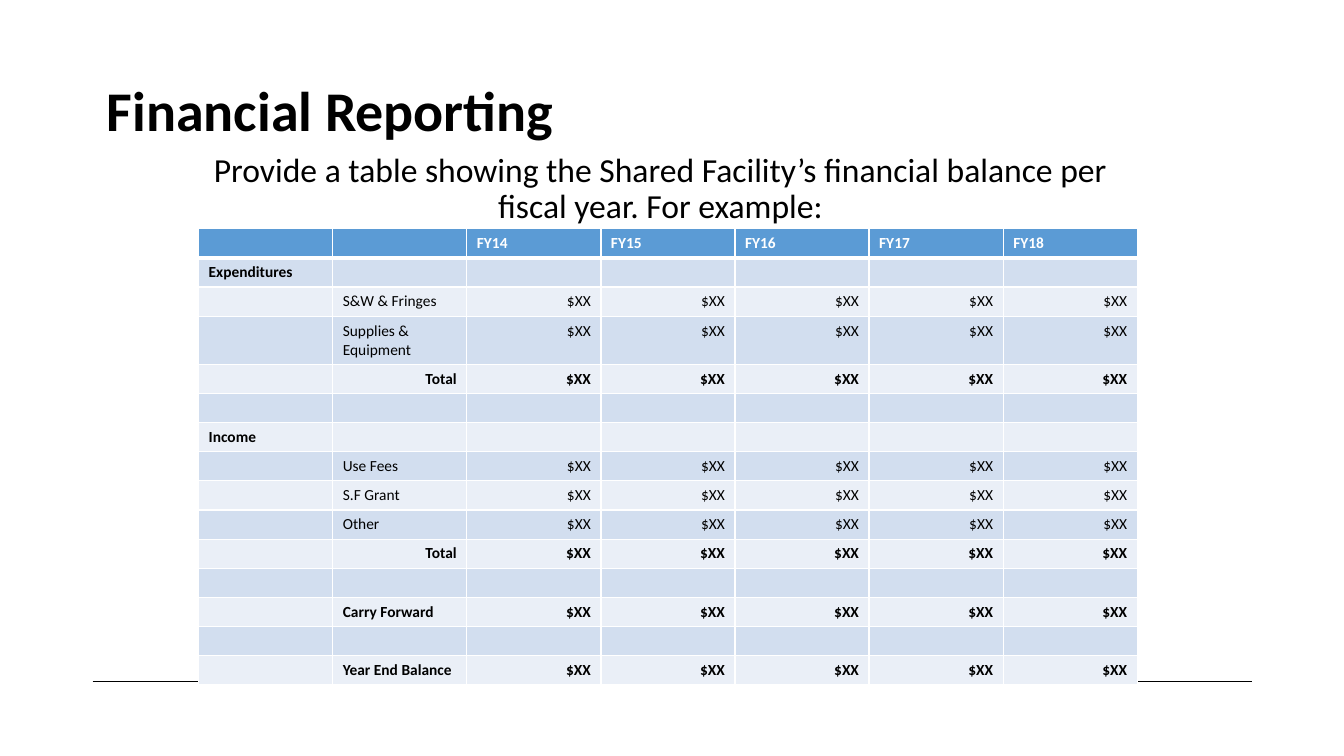
from lxml.etree import SubElement
from pptx import Presentation
from pptx.dml.color import RGBColor
from pptx.enum.text import MSO_ANCHOR as Anchor, MSO_AUTO_SIZE as AutoSize, PP_ALIGN as Align
from pptx.oxml import parse_xml
from pptx.oxml.ns import nsdecls, qn
from pptx.util import Inches, Pt

COLORS = {"text": "000000", "white": "FFFFFF", "header": "5B9BD5",
          "band_dark": "D2DEEF", "band_light": "EAEFF7"}
FONT = "Calibri"
YEARS = ["FY14", "FY15", "FY16", "FY17", "FY18"]
AMOUNTS = ["$XX"] * len(YEARS)
BLANKS = [""] * len(YEARS)
ROWS = [
    ["", "", *YEARS],
    ["Expenditures", "", *BLANKS],
    ["", "S&W & Fringes", *AMOUNTS],
    ["", "Supplies & Equipment", *AMOUNTS],
    ["", "Total", *AMOUNTS],
    ["", "", *BLANKS],
    ["Income", "", *BLANKS],
    ["", "Use Fees", *AMOUNTS],
    ["", "S.F Grant", *AMOUNTS],
    ["", "Other", *AMOUNTS],
    ["", "Total", *AMOUNTS],
    ["", "", *BLANKS],
    ["", "Carry Forward", *AMOUNTS],
    ["", "", *BLANKS],
    ["", "Year End Balance", *AMOUNTS],
]
BOLD_LABELS = {"Total", "Carry Forward", "Year End Balance"}


def rgb(name):
    """Return the named palette colour."""
    return RGBColor.from_string(COLORS[name])


def write(tf, text, size, color="text", bold=False, align=Align.LEFT, spacing=None):
    """Write one formatted paragraph into a text frame."""
    p = tf.paragraphs[0]
    p.alignment = align
    p.line_spacing = spacing
    if not text:
        p._p.get_or_add_endParaRPr().set("sz", str(size * 100))
        return
    r = p.add_run()
    r.text = text
    r.font.name, r.font.size, r.font.bold = FONT, Pt(size), bold
    r.font.color.rgb = rgb(color)


def fill_placeholder(sp, box, text, size, anchor, **fmt):
    """Move a placeholder to its box and write its text."""
    sp.left, sp.top, sp.width, sp.height = [Inches(v) for v in box]
    tf = sp.text_frame
    tf.word_wrap = True
    tf.auto_size = AutoSize.NONE
    tf.vertical_anchor = anchor
    write(tf, text, size, spacing=0.9, **fmt)


def add_rule(s, x, y, width):
    """Draw the thin horizontal footer rule."""
    rule = s.shapes.add_connector(1, Inches(x), Inches(y), Inches(x + width), Inches(y))
    rule.line.color.rgb = rgb("text")
    rule.line.width = Pt(0.25)
    rule._element.spPr.append(parse_xml(f"<a:effectLst {nsdecls('a')}/>"))


def set_borders(cell, top=1, bottom=1):
    """Give a cell white borders with the given widths in points."""
    tcPr = cell._tc.get_or_add_tcPr()
    for side, width in {"L": 1, "R": 1, "T": top, "B": bottom}.items():
        ln = SubElement(tcPr, qn(f"a:ln{side}"), w=str(Pt(width)))
        SubElement(SubElement(ln, qn("a:solidFill")), qn("a:srgbClr"), val=COLORS["white"])


def add_balance_table(s, x, y, width):
    """Build the balance table by fiscal year."""
    n_cols = len(ROWS[0])
    row_h, tall_h = 0.26, 0.44
    height = row_h * (len(ROWS) - 1) + tall_h
    table = s.shapes.add_table(len(ROWS), n_cols, Inches(x), Inches(y),
                               Inches(width), Inches(height)).table
    for i, values in enumerate(ROWS):
        label = values[1]
        table.rows[i].height = Inches(tall_h if label == "Supplies & Equipment" else row_h)
        fill = "header" if i == 0 else "band_dark" if i % 2 else "band_light"
        for j, text in enumerate(values):
            cell = table.cell(i, j)
            set_borders(cell, top=3 if i == 1 else 1, bottom=3 if i == 0 else 1)
            cell.fill.solid()
            cell.fill.fore_color.rgb = rgb(fill)
            right = text in ("$XX", "Total")
            write(cell.text_frame, text, 11,
                  color="white" if i == 0 else "text",
                  bold=i == 0 or j == 0 or label in BOLD_LABELS,
                  align=Align.RIGHT if right else Align.LEFT)


def add_financial_slide(prs):
    """Add the financial reporting slide."""
    s = prs.slides.add_slide(prs.slide_layouts[0])
    add_rule(s, 0.92, 6.76, 11.5)
    fill_placeholder(s.shapes.title, (0.96, 0.67, 11.18, 0.8),
                     "Financial Reporting", 40, Anchor.BOTTOM, bold=True)
    fill_placeholder(s.placeholders[1], (1.82, 1.47, 9.46, 3.83),
                     "Provide a table showing the Shared Facility’s financial balance "
                     "per fiscal year. For example:", 24, Anchor.TOP, align=Align.CENTER)
    add_balance_table(s, 1.97, 2.27, 9.31)


def main():
    """Build and save the presentation."""
    prs = Presentation()
    prs.slide_width, prs.slide_height = Inches(13.33), Inches(7.5)
    add_financial_slide(prs)
    prs.save("out.pptx")


if __name__ == "__main__":
    main()
